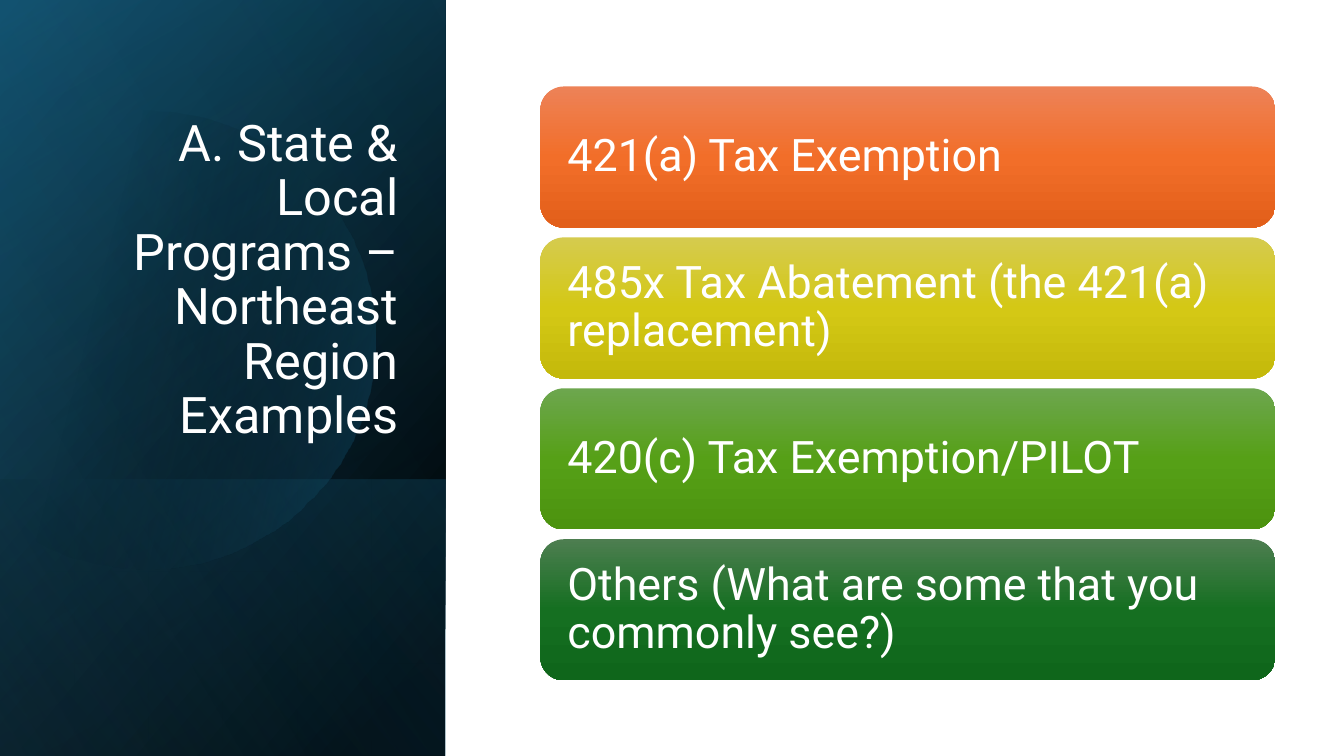
from math import acos, cos, pi, sin

from lxml import etree
from pptx import Presentation
from pptx.dml.color import RGBColor
from pptx.enum.shapes import MSO_SHAPE as Shape
from pptx.enum.text import MSO_ANCHOR as Anchor, PP_ALIGN as Align
from pptx.oxml.ns import qn
from pptx.util import Pt

BLACK = RGBColor(0x00, 0x00, 0x00)
WHITE = RGBColor(0xFF, 0xFF, 0xFF)
NAVY = RGBColor(0x10, 0x48, 0x62)
TEAL = RGBColor(0x15, 0x60, 0x82)
SKY = RGBColor(0x46, 0xB1, 0xE1)
ORANGE = [RGBColor(0xED, 0x82, 0x57), RGBColor(0xF2, 0x6E, 0x29), RGBColor(0xE2, 0x5F, 0x1A)]
YELLOW = [RGBColor(0xD5, 0xCB, 0x4E), RGBColor(0xD4, 0xC8, 0x15), RGBColor(0xC4, 0xB9, 0x0B)]
GREEN = [RGBColor(0x6D, 0xA6, 0x4E), RGBColor(0x56, 0xA0, 0x17), RGBColor(0x4C, 0x93, 0x0F)]
FOREST = [RGBColor(0x4D, 0x7E, 0x50), RGBColor(0x15, 0x6F, 0x21), RGBColor(0x0F, 0x66, 0x1B)]

TITLE = "A. State & Local Programs – Northeast Region Examples"
PROGRAMS = [
    ("421(a) Tax Exemption", ORANGE),
    ("485x Tax Abatement (the 421(a) replacement)", YELLOW),
    ("420(c) Tax Exemption/PILOT", GREEN),
    ("Others (What are some that you commonly see?)", FOREST),
]


def shade(shape, stops, angle):
    """Fill with (position %, colour, opacity %) stops, at a clockwise angle."""
    shape.shadow.inherit = False
    shape.line.fill.background()
    shape.fill.gradient()
    shape.fill.gradient_angle = 360 - angle
    stop_list = shape._element.spPr.find(qn("a:gradFill")).find(qn("a:gsLst"))
    for default_stop in list(stop_list):
        stop_list.remove(default_stop)
    for position, colour, opacity in stops:
        stop = etree.SubElement(stop_list, qn("a:gs"), pos=str(position * 1000))
        tint = etree.SubElement(stop, qn("a:srgbClr"), val=str(colour))
        if opacity < 100:
            etree.SubElement(tint, qn("a:alpha"), val=str(opacity * 1000))


def write(shape, text, size, align, frame_format):
    frame = shape.text_frame
    frame.word_wrap = True
    for name, value in frame_format.items():
        setattr(frame, name, value)
    paragraph = frame.paragraphs[0]
    paragraph.alignment = align
    paragraph.line_spacing = 0.9
    run = paragraph.add_run()
    run.text = text
    for name, value in {"name": "Roboto", "size": Pt(size)}.items():
        setattr(run.font, name, value)
    run.font.color.rgb = WHITE


def add_layer(slide, box, stops, angle):
    """Cover the box with a mirrored rectangle turned a quarter."""
    left, top, width, height = box
    layer = slide.shapes.add_shape(
        Shape.RECTANGLE, Pt(left + (width - height) / 2),
        Pt(top + (height - width) / 2), Pt(height), Pt(width))
    layer.rotation = 90
    layer._element.spPr.xfrm.set("flipH", "1")
    shade(layer, stops, angle)


def add_glow(slide, box):
    """Add a large disc, cut off by the left side of the box."""
    left, top, _, height = box
    radius = 0.303 * height
    centre_x, centre_y = left + 104.5, top + 0.45 * height
    reach = acos((left - centre_x) / radius)
    steps = 120
    angles = [reach * (2 * step / steps - 1) for step in range(steps + 1)]
    rim = [(centre_x + radius * cos(a), centre_y + radius * sin(a)) for a in angles]
    outline = slide.shapes.build_freeform(*rim[0], scale=Pt(1))
    outline.add_line_segments(rim[1:], close=True)
    shade(outline.convert_to_shape(), [(29, BLACK, 0), (100, TEAL, 43)], 14)


def add_title_panel(slide, box):
    left, top, width, height = box
    foot = 197.3
    add_layer(slide, box, [(8, BLACK, 100), (100, NAVY, 100)], 50)
    add_layer(slide, box, [(0, BLACK, 0), (99, TEAL, 46)], 30)
    add_layer(slide, (left, top + height - foot, width, foot),
              [(2, TEAL, 29), (100, BLACK, 30)], 130)
    add_glow(slide, box)
    add_layer(slide, box, [(0, BLACK, 0), (99, SKY, 11)], 120)
    title = slide.shapes.add_textbox(
        Pt(left + 46), Pt(top + 132.5), Pt(width - 72.5), Pt(188.6))
    write(title, TITLE, 36, Align.RIGHT, {"vertical_anchor": Anchor.BOTTOM})


def add_program_cards(slide, box):
    left, top, width, height = box
    gap = 7
    card_height = (height - gap * (len(PROGRAMS) - 1)) / len(PROGRAMS)
    for index, (program, colours) in enumerate(PROGRAMS):
        card = slide.shapes.add_shape(
            Shape.ROUNDED_RECTANGLE, Pt(left), Pt(top + index * (card_height + gap)),
            Pt(width), Pt(card_height))
        shade(card, [(50 * i, colour, 100) for i, colour in enumerate(colours)], 90)
        write(card, program, 32, Align.LEFT, {
            "vertical_anchor": Anchor.MIDDLE,
            "margin_left": Pt(14.4), "margin_right": Pt(14.4)})


def main():
    deck = Presentation()
    deck.slide_width, deck.slide_height = Pt(960), Pt(540)
    slide = deck.slides.add_slide(deck.slide_layouts[6])
    add_title_panel(slide, (0, 0, 318.2, 540))
    add_program_cards(slide, (386, 61.8, 525, 424.2))
    deck.save("out.pptx")


if __name__ == "__main__":
    main()
